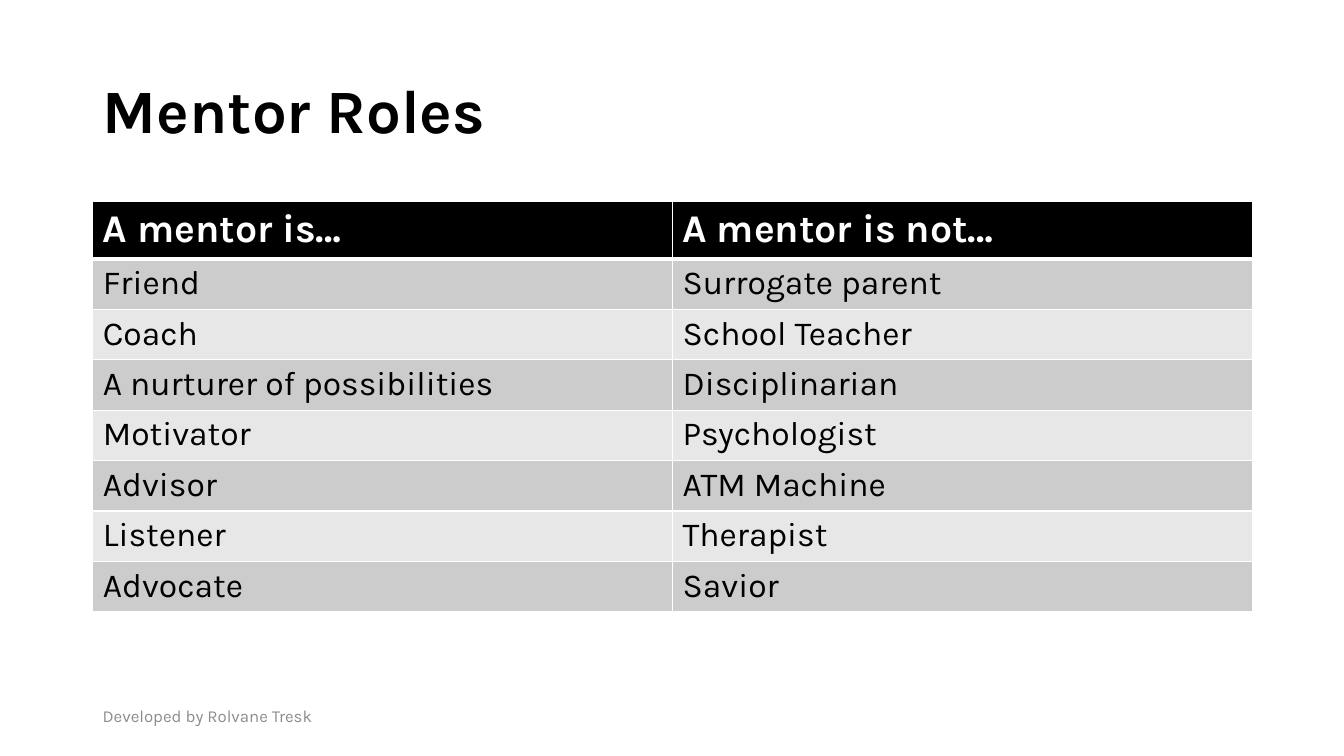
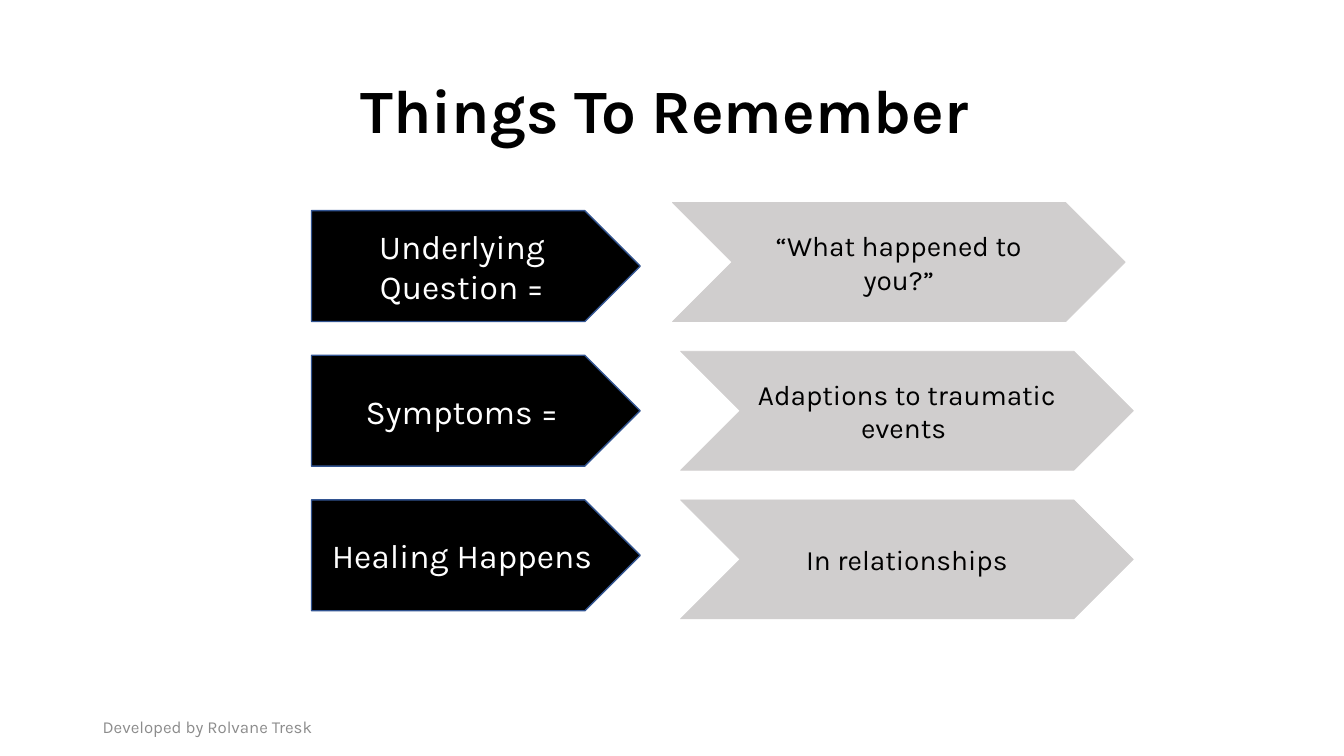
from lxml.etree import SubElement
from pptx import Presentation
from pptx.dml.color import RGBColor
from pptx.enum.shapes import MSO_SHAPE as Shape
from pptx.enum.text import MSO_ANCHOR as Anchor, MSO_AUTO_SIZE as AutoSize, PP_ALIGN as Align
from pptx.oxml.ns import qn
from pptx.util import Inches, Pt

FONT = "Karla"
BLACK, WHITE, FOOTER_GREY = "000000", "FFFFFF", "8C8C8C"
BANDS = ("CCCCCC", "E7E7E7")
CHEVRON_GREY, PLATE_LINE = "D0CECE", "325491"

TITLE_BOX = (0.92, 0.4, 11.5, 1.45)
TITLE = {"size": Pt(44), "bold": True}
FOOTER = {"size": Pt(12), "bold": False}
HEADING = {"size": Pt(28), "bold": True}
ENTRY = {"size": Pt(24), "bold": False}
PLATE_TEXT = {"size": Pt(24), "bold": False}
CHEVRON_TEXT = {"size": Pt(20), "bold": False}

ROLES = (
    ("A mentor is…", "A mentor is not…"),
    ("Friend", "Surrogate parent"),
    ("Coach", "School Teacher"),
    ("A nurturer of possibilities", "Disciplinarian"),
    ("Motivator", "Psychologist"),
    ("Advisor", "ATM Machine"),
    ("Listener", "Therapist"),
    ("Advocate", "Savior"),
)
REMINDERS = (
    ("Underlying Question =", "“What happened to you?”", 6.67),
    ("Symptoms =", "Adaptions to traumatic events ", 6.75),
    ("Healing Happens", "In relationships", 6.75),
)


def paint(target, color):
    target.solid()
    target.fore_color.rgb = RGBColor.from_string(color)


def apply(target, values):
    for name, value in values.items():
        setattr(target, name, value)


def write(frame, text, style, color, align=Align.LEFT):
    para = frame.paragraphs[0]
    para.alignment = align
    span = para.add_run()
    span.text = text
    apply(span.font, {"name": FONT, **style})
    paint(span.font.fill, color)
    return para


def add_title(page, box, text, align):
    title = page.shapes.title
    apply(title, dict(zip(("left", "top", "width", "height"), map(Inches, box))))
    apply(title.text_frame, {"vertical_anchor": Anchor.MIDDLE, "auto_size": AutoSize.NONE})
    write(title.text_frame, text, TITLE, BLACK, align).line_spacing = 0.9


def add_footer(page, box):
    frame = page.shapes.add_textbox(*map(Inches, box)).text_frame
    apply(frame, {"word_wrap": True, "vertical_anchor": Anchor.MIDDLE})
    write(frame, "Developed by Rolvane Tresk", FOOTER, FOOTER_GREY)


def add_page(deck, title, align, footer_top):
    page = deck.slides.add_slide(deck.slide_layouts[5])
    add_title(page, TITLE_BOX, title, align)
    add_footer(page, (0.92, footer_top, 4.5, 0.4))
    return page


def set_borders(cell, widths):
    properties = cell._tc.get_or_add_tcPr()
    for side, width in widths.items():
        line = SubElement(properties, qn(f"a:ln{side}"), w=str(Pt(width)))
        fill = SubElement(line, qn("a:solidFill"))
        SubElement(fill, qn("a:srgbClr"), val=WHITE)


def add_roles(page, box, heading_height):
    left, top, width, height = box
    table = page.shapes.add_table(
        len(ROLES), len(ROLES[0]), *map(Inches, box)).table
    for column in table.columns:
        column.width = Inches(width / len(ROLES[0]))
    entry_height = (height - heading_height) / (len(ROLES) - 1)
    for row, texts in enumerate(ROLES):
        heading = row == 0
        table.rows[row].height = Inches(heading_height if heading else entry_height)
        for column, text in enumerate(texts):
            cell = table.cell(row, column)
            set_borders(cell, {"L": 1, "R": 1, "T": 3 if row == 1 else 1, "B": 3 if heading else 1})
            paint(cell.fill, BLACK if heading else BANDS[(row - 1) % 2])
            write(cell.text_frame, text, HEADING if heading else ENTRY, WHITE if heading else BLACK)


def add_arrow(page, kind, box, text, style, color, fill, line, line_width):
    arrow = page.shapes.add_shape(kind, *map(Inches, box))
    arrow.shadow.inherit = False
    paint(arrow.fill, fill)
    paint(arrow.line.fill, line)
    arrow.line.width = Pt(line_width)
    apply(arrow.text_frame, {"word_wrap": True, "vertical_anchor": Anchor.MIDDLE})
    write(arrow.text_frame, text, style, color, Align.CENTER)


def add_reminders(page, left, plate_top, chevron_top):
    for row, (topic, answer, answer_left) in enumerate(REMINDERS):
        add_arrow(page, Shape.PENTAGON, (left, plate_top + row * 1.435, 3.26, 1.1),
                  topic, PLATE_TEXT, WHITE, BLACK, PLATE_LINE, 1)
        add_arrow(page, Shape.CHEVRON, (answer_left, chevron_top + row * 1.475, 4.49, 1.18),
                  answer, CHEVRON_TEXT, BLACK, CHEVRON_GREY, CHEVRON_GREY, 0.5)


def main():
    deck = Presentation()
    apply(deck, {"slide_width": Inches(13.33), "slide_height": Inches(7.5)})
    roles = add_page(deck, "Mentor Roles", Align.LEFT, 6.9)
    add_roles(roles, (0.92, 2, 11.5, 3.97), 0.54)
    reminders = add_page(deck, "Things To Remember ", Align.CENTER, 7.01)
    add_reminders(reminders, 3.09, 2.09, 2.01)
    deck.save("out.pptx")


if __name__ == "__main__":
    main()
